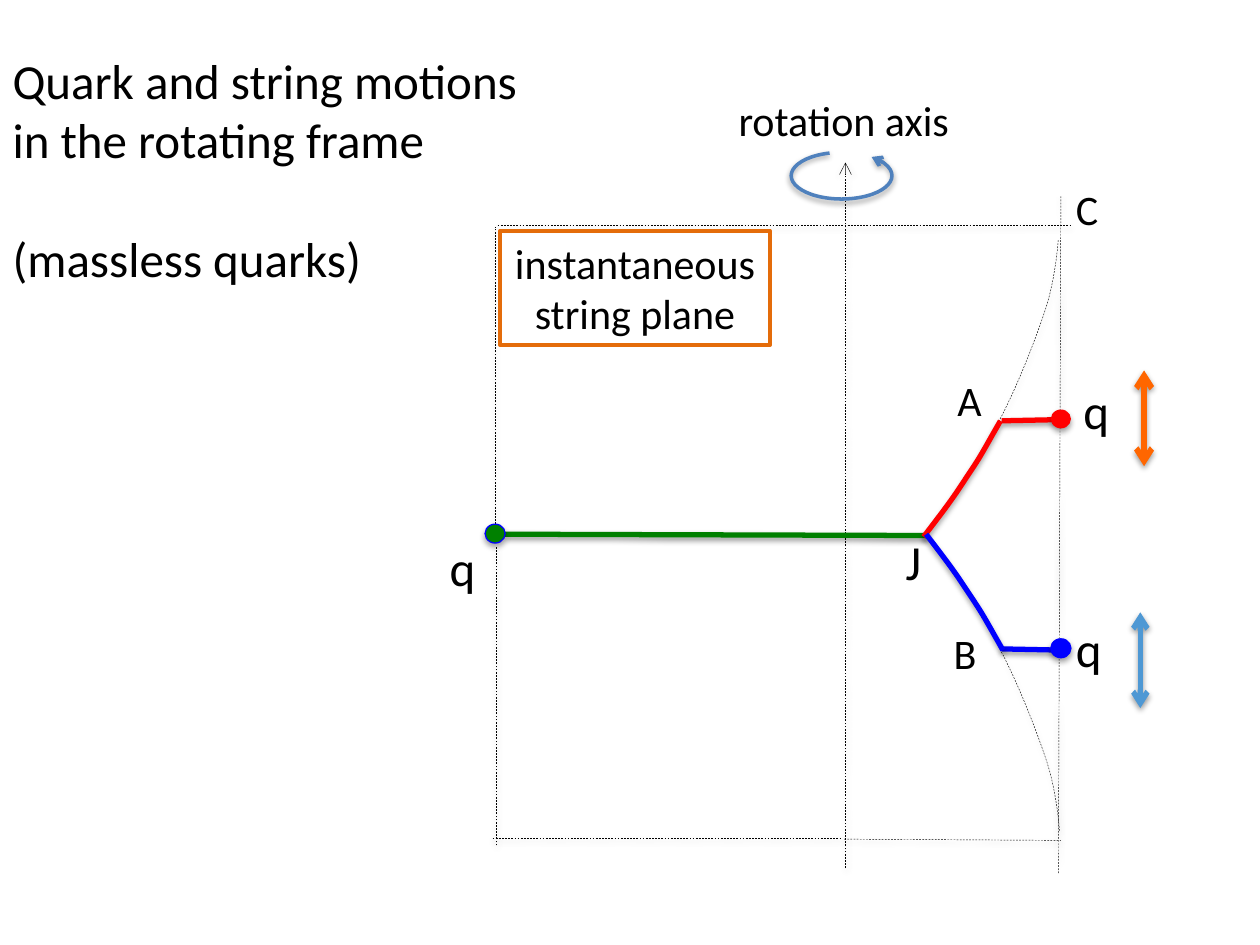
from lxml import etree
from pptx import Presentation
from pptx.dml.color import RGBColor
from pptx.enum import dml, shapes, text
from pptx.oxml import ns
from pptx.util import Inches, Pt

BLACK = RGBColor(0x00, 0x00, 0x00)
RED = RGBColor(0xFF, 0x00, 0x00)
BLUE = RGBColor(0x00, 0x00, 0xFF)
GREEN = RGBColor(0x00, 0x80, 0x00)
ORANGE = RGBColor(0xFF, 0x66, 0x00)
DARK_ORANGE = RGBColor(0xE4, 0x6C, 0x0A)
SKY = RGBColor(0x4E, 0x98, 0xD4)
STEEL = RGBColor(0x4F, 0x81, 0xBD)

# Content: lengths in inches
TITLE = ["Quark and string motions in the rotating frame", "(massless quarks)"]
GUIDES = [  # from, to, arrow ends
    ((8.4, 6.93), (8.42, 1.55), ()),
    ((3.91, 6.65), (6.68, 6.65), ()),
    ((6.7, 6.66), (8.42, 6.67), ()),
    ((6.71, 6.89), (6.71, 1.29), ("tailEnd",)),
    ((3.93, 4.16), (3.93, 1.8), ()),
    ((3.95, 1.79), (8.51, 1.79), ()),
    ((3.94, 6.71), (3.94, 4.34), ()),
]
STRINGS = [
    ((7.95, 5.15), (8.43, 5.16), BLUE),
    ((7.95, 3.34), (8.43, 3.33), RED),
    ((4.01, 4.24), (7.35, 4.25), GREEN),
]
MOTIONS = [(9.08, 2.94, ORANGE, 3.25), (9.05, 4.86, SKY, 3)]
MOTION_LENGTH = 0.76
# Upper curves: a start point followed by triples of Bezier points
ENVELOPE = [(7.33, 4.26), (7.54, 3.97), (7.76, 3.67), (7.92, 3.36), (8.08, 3.06),
            (8.22, 2.69), (8.3, 2.45), (8.38, 2.2), (8.4, 1.9), (8.4, 1.9)]
BRANCH = [(7.33, 4.26), (7.57, 3.95), (7.59, 3.91), (7.69, 3.76),
          (7.79, 3.61), (7.78, 3.62), (7.94, 3.34)]
MIRROR_Y = 4.25
QUARKS = [(8.34, 3.25, RED, None), (8.34, 5.07, BLUE, BLUE), (3.85, 4.16, GREEN, BLUE)]
LABELS = [  # text, left, top, width, height, size, alignment
    ("q", 8.5, 2.97, 0.41, 0.57, 28, "LEFT"),
    ("q", 8.44, 4.86, 0.41, 0.57, 28, "LEFT"),
    ("q", 3.47, 4.22, 0.41, 0.57, 28, "LEFT"),
    ("J", 7.09, 4.17, 0.33, 0.57, 28, "LEFT"),
    ("A", 7.5, 2.92, 0.36, 0.5, 24, "LEFT"),
    ("B", 7.47, 4.93, 0.36, 0.5, 24, "LEFT"),
    ("C", 8.44, 1.41, 0.36, 0.5, 24, "LEFT"),
    ("rotation axis", 5.65, 0.7, 1.98, 0.5, 24, "RIGHT"),
]


def write(para, words, size=24, align="LEFT", before=0):
    para.alignment = text.PP_ALIGN[align]
    para.space_before = Pt(before)
    span = para.add_run()
    span.text = words
    span.font.name = "Calibri"
    span.font.size = Pt(size)
    span.font.color.rgb = BLACK


def style_line(shape, color, width, dashed=False, ends=()):
    shape.line.color.rgb = color
    shape.line.width = Pt(width)
    if dashed:
        shape.line.dash_style = dml.MSO_LINE.DASH
    for end in ends:
        etree.SubElement(shape.line._get_or_add_ln(), ns.qn("a:" + end), type="arrow")


def add_line(page, start, stop, color, width, **style):
    points = [Inches(value) for value in start + stop]
    line = page.shapes.add_connector(shapes.MSO_CONNECTOR.STRAIGHT, *points)
    style_line(line, color, width, **style)


def bezier(points, steps=12):
    curve = [points[0]]
    for first in range(0, len(points) - 1, 3):
        a, b, c, d = points[first:first + 4]
        for step in range(1, steps + 1):
            t = step / steps
            s = 1 - t
            curve.append(tuple(s**3 * a[i] + 3 * s * s * t * b[i] + 3 * s * t * t * c[i]
                               + t**3 * d[i] for i in (0, 1)))
    return [(Inches(x), Inches(y)) for x, y in curve]


def add_curve(page, points, color, width, **style):
    curve = bezier(points)
    builder = page.shapes.build_freeform(*curve[0])
    builder.add_line_segments(curve[1:], close=False)
    shape = builder.convert_to_shape()
    shape.fill.background()
    style_line(shape, color, width, **style)


def mirrored(points, shift):
    return [(x + shift, 2 * MIRROR_Y - y) for x, y in points]


def add_preset(page, kind, left, top, width, height):
    place = [Inches(value) for value in (left, top, width, height)]
    return page.shapes.add_shape(kind, *place)


def main():
    deck = Presentation()
    deck.slide_width, deck.slide_height = Inches(10), Inches(7.5)
    page = deck.slides.add_slide(deck.slide_layouts[5])

    # Title
    title = page.shapes.title
    title.left, title.top = Inches(0), Inches(0.08)
    title.width, title.height = Inches(4.24), Inches(2.99)
    frame = title.text_frame
    frame.word_wrap = True
    frame.auto_size = text.MSO_AUTO_SIZE.NONE
    frame.vertical_anchor = text.MSO_ANCHOR.MIDDLE
    frame.margin_bottom = Inches(0.52)
    write(frame.paragraphs[0], TITLE[0], size=28)
    write(frame.add_paragraph(), TITLE[1], size=28, before=34)

    # Guide lines and envelope of the string plane
    for start, stop, ends in GUIDES:
        add_line(page, start, stop, BLACK, 0.25, dashed=True, ends=ends)
    for points in (ENVELOPE, mirrored(ENVELOPE, 0.01)):
        add_curve(page, points, BLACK, 0.25, dashed=True)

    # Strings joining the quarks at J
    for start, stop, color in STRINGS:
        add_line(page, start, stop, color, 3)
    add_curve(page, BRANCH, RED, 3)
    add_curve(page, mirrored(BRANCH, 0.02), BLUE, 3)

    # Quarks and their motions
    for left, top, fill, outline in QUARKS:
        quark = add_preset(page, shapes.MSO_SHAPE.OVAL, left, top, 0.16, 0.15)
        quark.fill.solid()
        quark.fill.fore_color.rgb = fill
        if outline:
            style_line(quark, outline, 0.75)
        else:
            quark.line.fill.background()
    for x, top, color, width in MOTIONS:
        add_line(page, (x, top), (x, top + MOTION_LENGTH), color, width,
                 ends=("headEnd", "tailEnd"))

    # Rotation arrow: adjustments are degrees times 0.6
    turn = add_preset(page, shapes.MSO_SHAPE.ARC, 6.28, 1.21, 0.8, 0.37)
    turn.adjustments[0], turn.adjustments[1] = 328 * 0.6, 242 * 0.6
    turn.fill.background()
    style_line(turn, STEEL, 2, ends=("headEnd",))

    # Labels
    for words, left, top, width, height, size, align in LABELS:
        place = [Inches(value) for value in (left, top, width, height)]
        box = page.shapes.add_textbox(*place)
        box.text_frame.word_wrap = len(words) > 1
        write(box.text_frame.paragraphs[0], words, size=size, align=align)

    # Framed caption
    caption = add_preset(page, shapes.MSO_SHAPE.RECTANGLE, 3.97, 1.83, 2.14, 0.91)
    caption.shadow.inherit = False
    caption.fill.background()
    style_line(caption, DARK_ORANGE, 2.25)
    caption.text_frame.word_wrap = True
    write(caption.text_frame.paragraphs[0], "instantaneous string plane", align="CENTER")

    deck.save("out.pptx")


if __name__ == "__main__":
    main()
